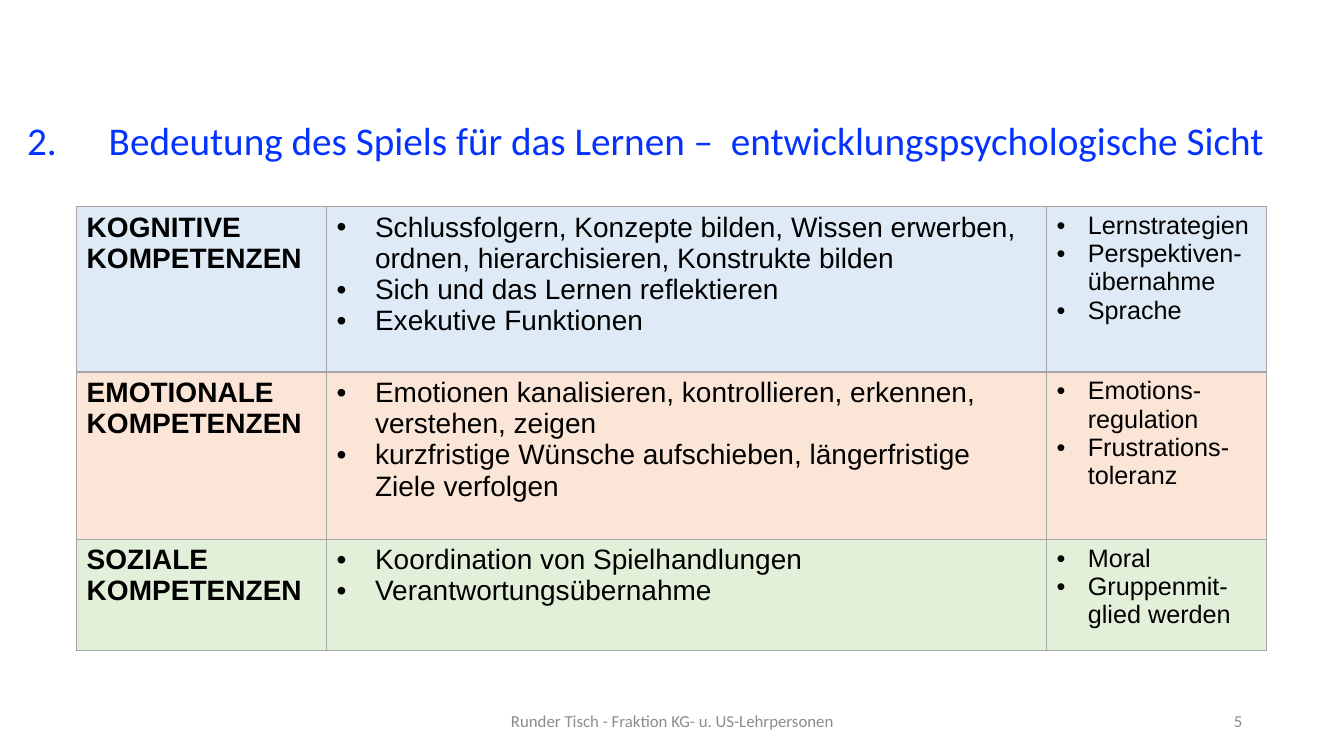
"""Build a slide on the role of play in learning with a table of skills."""
import dataclasses
import typing

import lxml.etree
import pptx
import pptx.dml.color
import pptx.enum.text
import pptx.util

RGBColor = pptx.dml.color.RGBColor
Inches = pptx.util.Inches
Pt = pptx.util.Pt
ALIGN = pptx.enum.text.PP_ALIGN
ANCHOR = pptx.enum.text.MSO_ANCHOR

BLUE = RGBColor(0x04, 0x32, 0xFF)
BLACK = RGBColor(0, 0, 0)
GREY = RGBColor(0x8C, 0x8C, 0x8C)
RULE = RGBColor(0xA5, 0xA5, 0xA5)
SKY = RGBColor(0xDE, 0xEB, 0xF7)
PEACH = RGBColor(0xFB, 0xE5, 0xD6)
MINT = RGBColor(0xE2, 0xF0, 0xD9)


@dataclasses.dataclass(frozen=True)
class Style:
    font: dict[str, typing.Any]
    color: RGBColor
    indent: float = 0
    number: int = 0


@dataclasses.dataclass(frozen=True)
class Label:
    text: str
    box: tuple[float, float, float, float]
    style: Style
    para: dict[str, typing.Any]
    anchor: ANCHOR


@dataclasses.dataclass(frozen=True)
class Band:
    height: float
    fill: RGBColor
    cells: tuple[list[str], list[str], list[str]]


TITLE = Style({"name": "Calibri", "size": Pt(28)}, BLUE, 0.81, 2)
FOOT = Style({"name": "Calibri", "size": Pt(12)}, GREY)
STYLES = (
    Style({"name": "Arial", "size": Pt(20), "bold": True}, BLACK),
    Style({"name": "Arial", "size": Pt(20), "bold": False}, BLACK, 0.38),
    Style({"name": "Arial", "size": Pt(18), "bold": False}, BLACK, 0.31),
)
WIDTHS = (2.48, 7.14, 2.18)

LABELS = (
    Label("Bedeutung des Spiels für das Lernen –  entwicklungspsychologische Sicht",
          (0.17, 0.78, 12.68, 0.9), TITLE, {"line_spacing": 1.7}, ANCHOR.TOP),
    Label("Runder Tisch - Fraktion KG- u. US-Lehrpersonen",
          (4.42, 6.95, 4.5, 0.4), FOOT, {"alignment": ALIGN.CENTER}, ANCHOR.MIDDLE),
    Label("5", (9.42, 6.95, 3, 0.4), FOOT, {"alignment": ALIGN.RIGHT}, ANCHOR.MIDDLE),
)

BANDS = (
    Band(1.64, SKY, (
        ["KOGNITIVE", "KOMPETENZEN"],
        ["Schlussfolgern, Konzepte bilden, Wissen erwerben, ordnen, "
         "hierarchisieren, Konstrukte bilden",
         "Sich und das Lernen reflektieren", "Exekutive Funktionen"],
        ["Lernstrategien", "Perspektiven-übernahme", "Sprache"])),
    Band(1.66, PEACH, (
        ["EMOTIONALE", "KOMPETENZEN"],
        ["Emotionen kanalisieren, kontrollieren, erkennen, verstehen, zeigen",
         "kurzfristige Wünsche aufschieben, längerfristige Ziele verfolgen"],
        ["Emotions-regulation", "Frustrations-toleranz"])),
    Band(1.1, MINT, (
        ["SOZIALE", "KOMPETENZEN"],
        ["Koordination von Spielhandlungen", "Verantwortungsübernahme"],
        ["Moral", "Gruppenmit-glied werden"])),
)


def apply(target: typing.Any, format: dict[str, typing.Any]) -> None:
    for key, value in format.items():
        setattr(target, key, value)


def add_node(parent: typing.Any, tag: str, **attrs: str) -> typing.Any:
    return lxml.etree.SubElement(parent, pptx.oxml.ns.qn(tag), attrs)


def add_bullet(para: typing.Any, style: Style) -> None:
    props = para._p.get_or_add_pPr()
    props.set("marL", str(Inches(style.indent)))
    props.set("indent", str(-Inches(style.indent)))
    if style.number:
        add_node(props, "a:buFont", typeface="+mj-lt")
        add_node(props, "a:buAutoNum", type="arabicPeriod", startAt=str(style.number))
    else:
        add_node(props, "a:buFont", typeface="Arial")
        add_node(props, "a:buChar", char="•")


def write(frame: typing.Any, lines: list[str], style: Style,
          format: dict[str, typing.Any]) -> None:
    for index, line in enumerate(lines):
        para = frame.add_paragraph() if index else frame.paragraphs[0]
        apply(para, format)
        if style.indent:
            add_bullet(para, style)
        run = para.add_run()
        run.text = line
        apply(run.font, style.font)
        run.font.color.rgb = style.color


def draw_label(slide: typing.Any, label: Label) -> None:
    box = slide.shapes.add_textbox(*map(Inches, label.box))
    apply(box.text_frame, {"word_wrap": True, "vertical_anchor": label.anchor})
    write(box.text_frame, [label.text], label.style, label.para)


def draw_edges(cell: typing.Any) -> None:
    props = cell._tc.get_or_add_tcPr()
    for side in "LRTB":
        edge = add_node(props, f"a:ln{side}", w=str(Pt(1)))
        add_node(add_node(edge, "a:solidFill"), "a:srgbClr", val=str(RULE))


def draw_table(slide: typing.Any, bands: tuple[Band, ...]) -> None:
    height = sum(band.height for band in bands)
    frame = slide.shapes.add_table(
        len(bands), len(WIDTHS), Inches(0.76), Inches(2.05),
        Inches(sum(WIDTHS)), Inches(height))
    table = frame.table
    apply(table, {"first_row": False, "horz_banding": False})
    for column, width in zip(table.columns, WIDTHS):
        column.width = Inches(width)
    for row, band in zip(table.rows, bands):
        row.height = Inches(band.height)
        for cell, lines, style in zip(row.cells, band.cells, STYLES):
            draw_edges(cell)
            cell.fill.solid()
            cell.fill.fore_color.rgb = band.fill
            write(cell.text_frame, lines, style, {})


def main() -> None:
    deck = pptx.Presentation()
    apply(deck, {"slide_width": Inches(13.33), "slide_height": Inches(7.5)})
    slide = deck.slides.add_slide(deck.slide_layouts[6])
    for label in LABELS:
        draw_label(slide, label)
    draw_table(slide, BANDS)
    deck.save("out.pptx")


if __name__ == "__main__":
    main()
